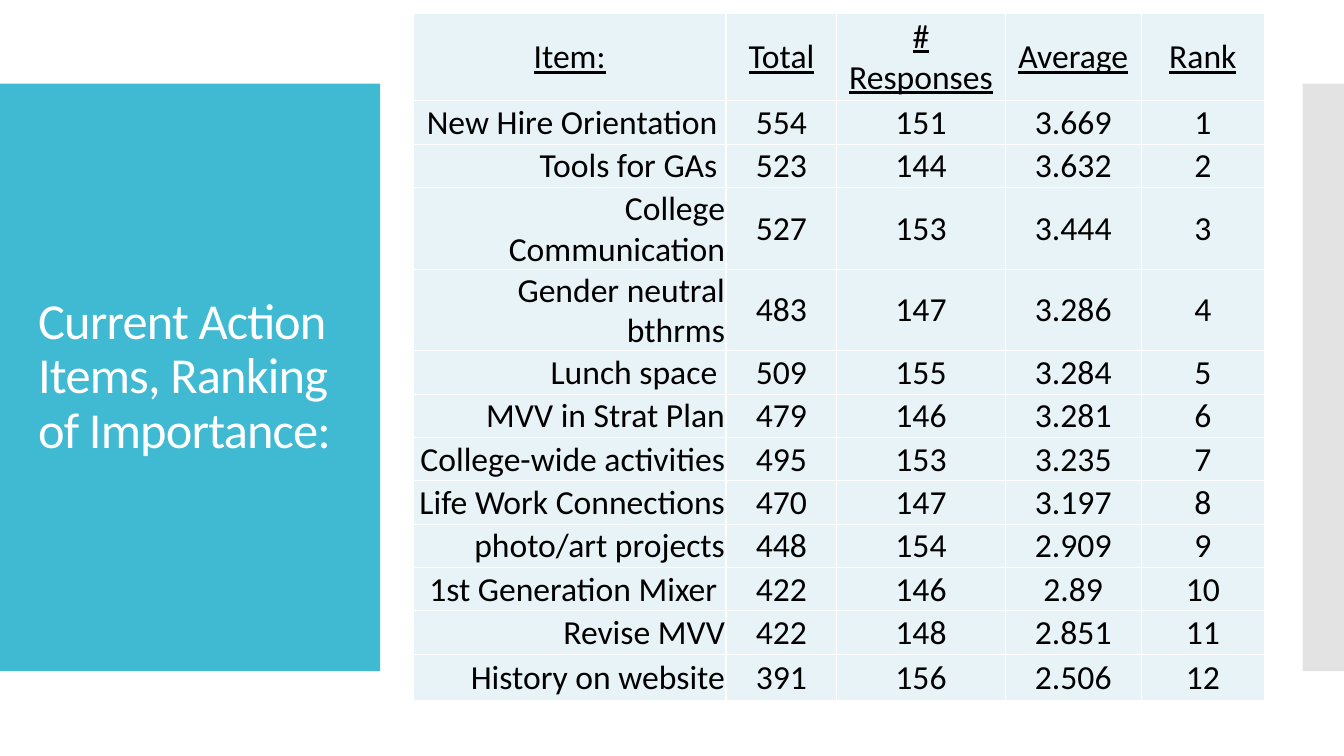
import lxml.etree
import pptx
import pptx.dml.color
import pptx.enum.shapes
import pptx.enum.text
import pptx.oxml.ns
import pptx.util

Inches = pptx.util.Inches
Pt = pptx.util.Pt
qn = pptx.oxml.ns.qn
ALIGN = pptx.enum.text.PP_ALIGN
MIDDLE = pptx.enum.text.MSO_ANCHOR.MIDDLE


def paint(fill, color):
    fill.solid()
    fill.fore_color.rgb = pptx.dml.color.RGBColor.from_string(color)


def style(r, size, color):
    r.font.name = "Calibri"
    r.font.size = Pt(size)
    paint(r.font.fill, color)


header = ["Item:", "Total", "# Responses", "Average", "Rank"]
items = [
    ("New Hire Orientation ", "554", "151", "3.669"),
    ("Tools for GAs ", "523", "144", "3.632"),
    ("College Communication", "527", "153", "3.444"),
    ("Gender neutral bthrms", "483", "147", "3.286"),
    ("Lunch space ", "509", "155", "3.284"),
    ("MVV in Strat Plan", "479", "146", "3.281"),
    ("College-wide activities ", "495", "153", "3.235"),
    ("Life Work Connections ", "470", "147", "3.197"),
    ("photo/art projects", "448", "154", "2.909"),
    ("1st Generation Mixer ", "422", "146", "2.89"),
    ("Revise MVV", "422", "148", "2.851"),
    ("History on website", "391", "156", "2.506"),
]
rows = [header] + [[*item, str(rank)] for rank, item in enumerate(items, 1)]
col_widths = [3.1, 1.1, 1.67, 1.35, 1.22]
row_heights = [0.87] + [0.43] * 11 + [0.46]

prs = pptx.Presentation()
prs.slide_width = Inches(13.33)
prs.slide_height = Inches(7.5)
s = prs.slides.add_slide(prs.slide_layouts[6])
paint(s.background.fill, "FFFFFF")

for left, width, color in [(0, 3.77, "40BAD2"), (12.92, 0.42, "C8C8C8")]:
    sp = s.shapes.add_shape(
        pptx.enum.shapes.MSO_SHAPE.RECTANGLE,
        Inches(left), Inches(0.83), Inches(width), Inches(5.83))
    sp.shadow.inherit = False
    sp.line.fill.background()
    paint(sp.fill, color)
side_color = sp.fill._xPr.find(".//" + qn("a:srgbClr"))
lxml.etree.SubElement(side_color, qn("a:alpha"), val="50000")

title = s.shapes.add_textbox(Inches(0.28), Inches(1.23), Inches(3.22), Inches(5.03))
tf = title.text_frame
tf.word_wrap = True
tf.vertical_anchor = MIDDLE
p = tf.paragraphs[0]
p.text = "Current Action Items, Ranking of Importance:"
p.line_spacing = 0.9
r = p.runs[0]
style(r, 36, "FFFFFF")
r.font._element.set("spc", "-60")

frame = s.shapes.add_table(
    len(rows), len(header), Inches(4.1), Inches(0.13),
    Inches(sum(col_widths)), Inches(sum(row_heights)))
table = frame.table
for column, width in zip(table.columns, col_widths):
    column.width = Inches(width)
for row, height in zip(table.rows, row_heights):
    row.height = Inches(height)

for i, values in enumerate(rows):
    for j, value in enumerate(values):
        cell = table.cell(i, j)
        cell.vertical_anchor = MIDDLE
        cell.margin_left = cell.margin_right = cell.margin_top = Inches(0.01)
        cell.margin_bottom = 0
        tc_pr = cell._tc.get_or_add_tcPr()
        for side in ("lnL", "lnR", "lnT", "lnB"):
            ln = lxml.etree.SubElement(tc_pr, qn("a:" + side), w=str(Pt(1)))
            solid = lxml.etree.SubElement(ln, qn("a:solidFill"))
            lxml.etree.SubElement(solid, qn("a:srgbClr"), val="FFFFFF")
        paint(cell.fill, "E8F3F7")
        p = cell.text_frame.paragraphs[0]
        p.text = value
        p.alignment = ALIGN.RIGHT if i > 0 and j == 0 else ALIGN.CENTER
        r = p.runs[0]
        style(r, 24, "000000")
        r.font.underline = i == 0

prs.save("out.pptx")
